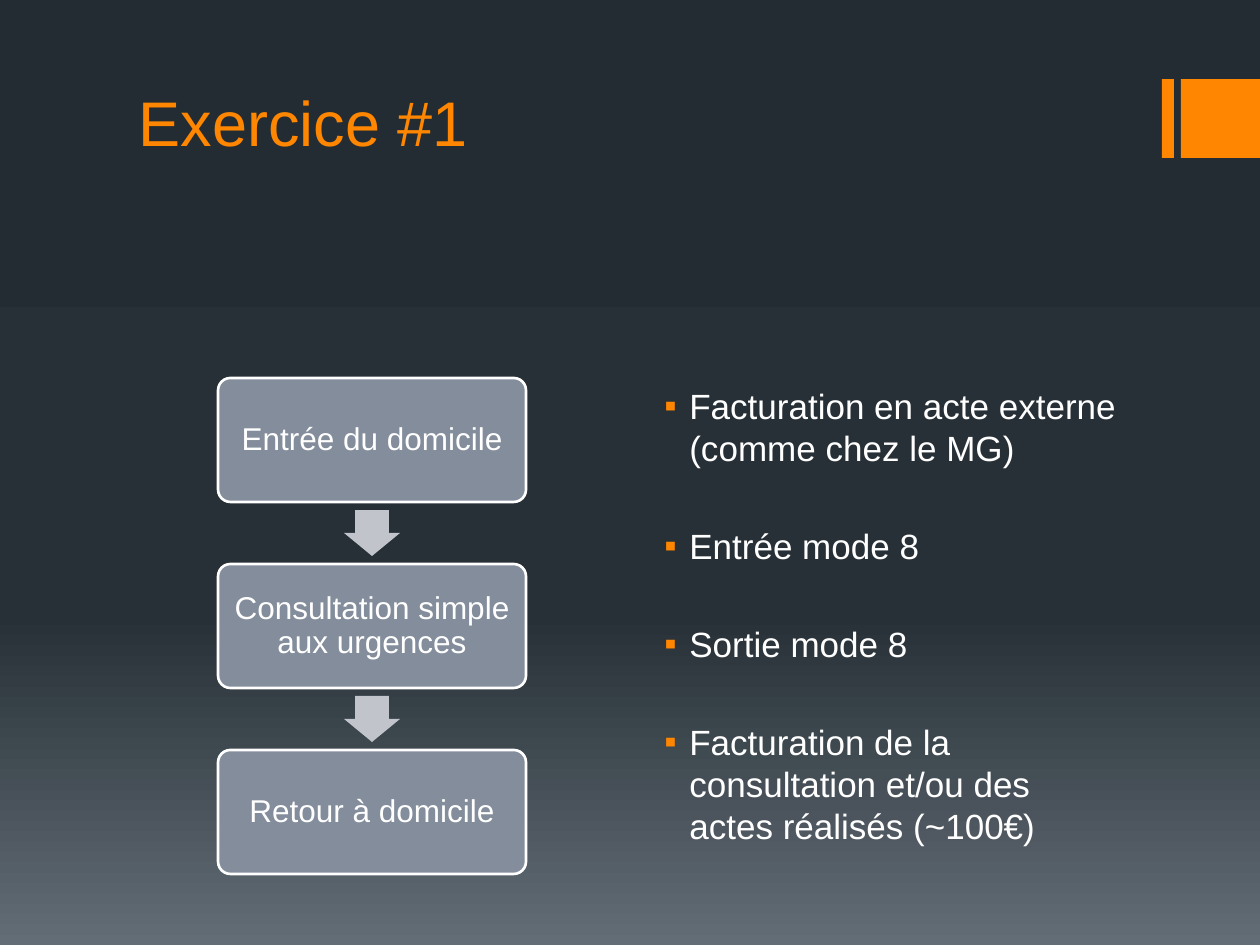
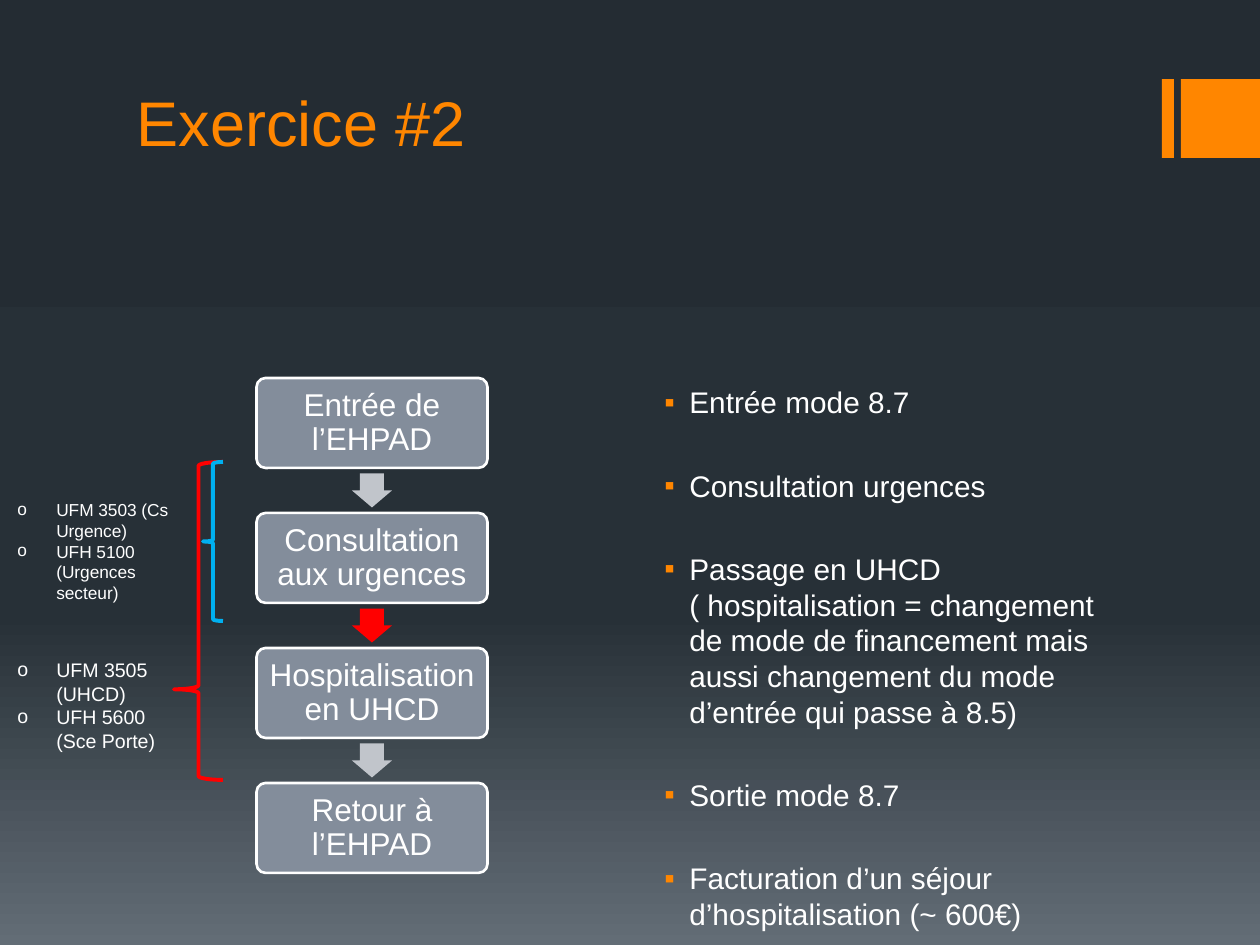
from copy import deepcopy

from lxml import etree
from pptx import Presentation
from pptx.dml.color import RGBColor
from pptx.enum.shapes import MSO_SHAPE
from pptx.enum.text import MSO_ANCHOR, PP_ALIGN
from pptx.oxml.ns import qn
from pptx.util import Emu, Pt

RECT = MSO_SHAPE.RECTANGLE
ROUNDED = MSO_SHAPE.ROUNDED_RECTANGLE
DOWN_ARROW = MSO_SHAPE.DOWN_ARROW
LEFT_BRACE = MSO_SHAPE.LEFT_BRACE
TOP, MIDDLE, BOTTOM = MSO_ANCHOR.TOP, MSO_ANCHOR.MIDDLE, MSO_ANCHOR.BOTTOM
LEFT, CENTER = PP_ALIGN.LEFT, PP_ALIGN.CENTER

PX_PER_INCH = 126
FONT = "Arial"
LINE_HEIGHT = 1.2
TITLE_ONLY = 5
CONTENT_TOP = 378
FLOW_CENTER = 372

COLORS = {
    "accent": "FF8600",
    "text": "FFFFFF",
    "step": "838D9B",
    "arrow": "C1C5CB",
    "admission": "FF0000",
    "emergency": "00B0F0",
}
BACKGROUND = [(0, "242C33"), (0.65, "273037"), (1, "636D76")]


def px(length):
    return Emu(round(length * 914400 / PX_PER_INCH))


def box(left, top, width, height):
    return px(left), px(top), px(width), px(height)


def color(name):
    return RGBColor.from_string(COLORS[name])


def add_run(paragraph, text, size, color_name="text"):
    run = paragraph.add_run()
    run.text = text
    run.font.name = FONT
    run.font.size = Pt(size)
    run.font.color.rgb = color(color_name)


def set_background(master):
    fill = master.background.fill
    fill.gradient()
    fill.gradient_angle = 270
    stop_list = master.element.find(".//" + qn("a:gsLst"))
    stop_list.append(deepcopy(stop_list[-1]))
    for stop, (position, rgb) in zip(fill.gradient_stops, BACKGROUND):
        stop.position = position
        stop.color.rgb = RGBColor.from_string(rgb)


def add_figure(slide, preset, frame, fill=None, line=None, line_width=1.5,
               adjustments=()):
    figure = slide.shapes.add_shape(preset, *box(*frame))
    figure.shadow.inherit = False
    if fill:
        figure.fill.solid()
        figure.fill.fore_color.rgb = color(fill)
    else:
        figure.fill.background()
    if line:
        figure.line.color.rgb = color(line)
        figure.line.width = Pt(line_width)
    else:
        figure.line.fill.background()
    for index, value in enumerate(adjustments):
        figure.adjustments[index] = value
    return figure


def add_exercise(prs, title, title_left):
    """Slide with the orange corner band and its title."""
    slide = prs.slides.add_slide(prs.slide_layouts[TITLE_ONLY])
    for left, width in ((1162, 12), (1181, 79)):
        add_figure(slide, RECT, (left, 79, width, 79), "accent")
    heading = slide.shapes.title
    heading.left, heading.top, heading.width, heading.height = box(
        title_left, 75, 1008, 90)
    heading.text_frame.vertical_anchor = BOTTOM
    paragraph = heading.text_frame.paragraphs[0]
    paragraph.alignment = LEFT
    add_run(paragraph, title, 36, "accent")
    return slide


def add_flow(slide, steps, width, pitch, arrow_colors):
    """Column of steps; box and arrow sizes follow from the pitch."""
    height = round(pitch * 2 / 3)
    arrow_width, arrow_height = round(pitch * 0.3), round(pitch / 4)
    for index, label in enumerate(steps):
        top = CONTENT_TOP + index * pitch
        step = add_figure(slide, ROUNDED,
                          (FLOW_CENTER - width / 2, top, width, height),
                          "step", "text", adjustments=[0.1])
        frame = step.text_frame
        frame.word_wrap = True
        frame.vertical_anchor = MIDDLE
        frame.margin_left = frame.margin_right = px(9)
        frame.margin_top = frame.margin_bottom = px(9)
        paragraph = frame.paragraphs[0]
        paragraph.alignment = CENTER
        paragraph.line_spacing = Pt(18 * LINE_HEIGHT * 0.9)
        add_run(paragraph, label, 18)
    for index, arrow_color in enumerate(arrow_colors):
        gap_center = CONTENT_TOP + index * pitch + (height + pitch) / 2
        add_figure(slide, DOWN_ARROW,
                   (FLOW_CENTER - arrow_width / 2, gap_center - arrow_height / 2,
                    arrow_width, arrow_height),
                   arrow_color, adjustments=[0.6, 0.5])


def set_bullet(paragraph, char, bullet_color, margin, indent):
    properties = paragraph._p.get_or_add_pPr()
    properties.set("marL", str(px(margin)))
    properties.set("indent", str(-px(indent)))
    holder = etree.SubElement(properties, qn("a:buClr"))
    etree.SubElement(holder, qn("a:srgbClr"), val=COLORS[bullet_color])
    etree.SubElement(properties, qn("a:buFont"), typeface=FONT)
    etree.SubElement(properties, qn("a:buChar"), char=char)


def add_list(slide, frame, items, size, char, bullet_color, margin, indent, gap=0):
    text_frame = slide.shapes.add_textbox(*box(*frame)).text_frame
    text_frame.word_wrap = True
    text_frame.vertical_anchor = TOP
    for index, item in enumerate(items):
        paragraph = text_frame.add_paragraph() if index else text_frame.paragraphs[0]
        paragraph.line_spacing = Pt(size * LINE_HEIGHT)
        paragraph.space_before = Pt(gap if index else 0)
        set_bullet(paragraph, char, bullet_color, margin, indent)
        add_run(paragraph, item, size)


def add_answers(slide, items, size):
    # One empty line plus two paragraph gaps of 20 % between answers
    add_list(slide, (645, CONTENT_TOP, 491, 495), items, size, "▪", "accent",
             32, 25, gap=size * (LINE_HEIGHT + 0.4))


def add_unit_codes(slide, top, items, size):
    add_list(slide, (5, top, 179, 100), items, size, "o", "text", 39, 39)


def main():
    prs = Presentation()
    prs.slide_width, prs.slide_height = px(1260), px(945)
    set_background(prs.slide_master)

    # Exercise 1: simple consultation
    slide = add_exercise(prs, "Exercice #1", 126)
    add_flow(slide,
             ["Entrée du domicile", "Consultation simple aux urgences",
              "Retour à domicile"],
             308, 186, ["arrow", "arrow"])
    add_answers(slide,
                ["Facturation en acte externe (comme chez le MG)",
                 "Entrée mode 8",
                 "Sortie mode 8",
                 "Facturation de la consultation et/ou des actes réalisés (~100€)"],
                20)

    # Exercise 2: stay in the short-term unit
    slide = add_exercise(prs, "Exercice #2", 124)
    add_flow(slide,
             ["Entrée de l’EHPAD", "Consultation aux urgences",
              "Hospitalisation en UHCD", "Retour à l’EHPAD"],
             231, 135, ["arrow", "admission", "arrow"])
    add_answers(slide,
                ["Entrée mode 8.7",
                 "Consultation urgences",
                 "Passage en UHCD ( hospitalisation = changement de mode de "
                 "financement mais aussi changement du mode d’entrée qui passe à 8.5)",
                 "Sortie mode 8.7",
                 "Facturation d’un séjour d’hospitalisation (~ 600€)"],
                17)

    # Unit codes and the steps they cover
    add_figure(slide, LEFT_BRACE, (174, 462, 49, 318), line="admission",
               line_width=2.25, adjustments=[0.08, 0.715])
    add_unit_codes(slide, 493,
                   ["UFM 3503 (Cs Urgence)", "UFH 5100 (Urgences secteur)"], 9.9)
    add_unit_codes(slide, 652,
                   ["UFM 3505 (UHCD)", "UFH 5600 (Sce Porte)"], 11.2)
    add_figure(slide, LEFT_BRACE, (203, 462, 20, 159), line="emergency",
               line_width=2.25)

    prs.save("out.pptx")


if __name__ == "__main__":
    main()
